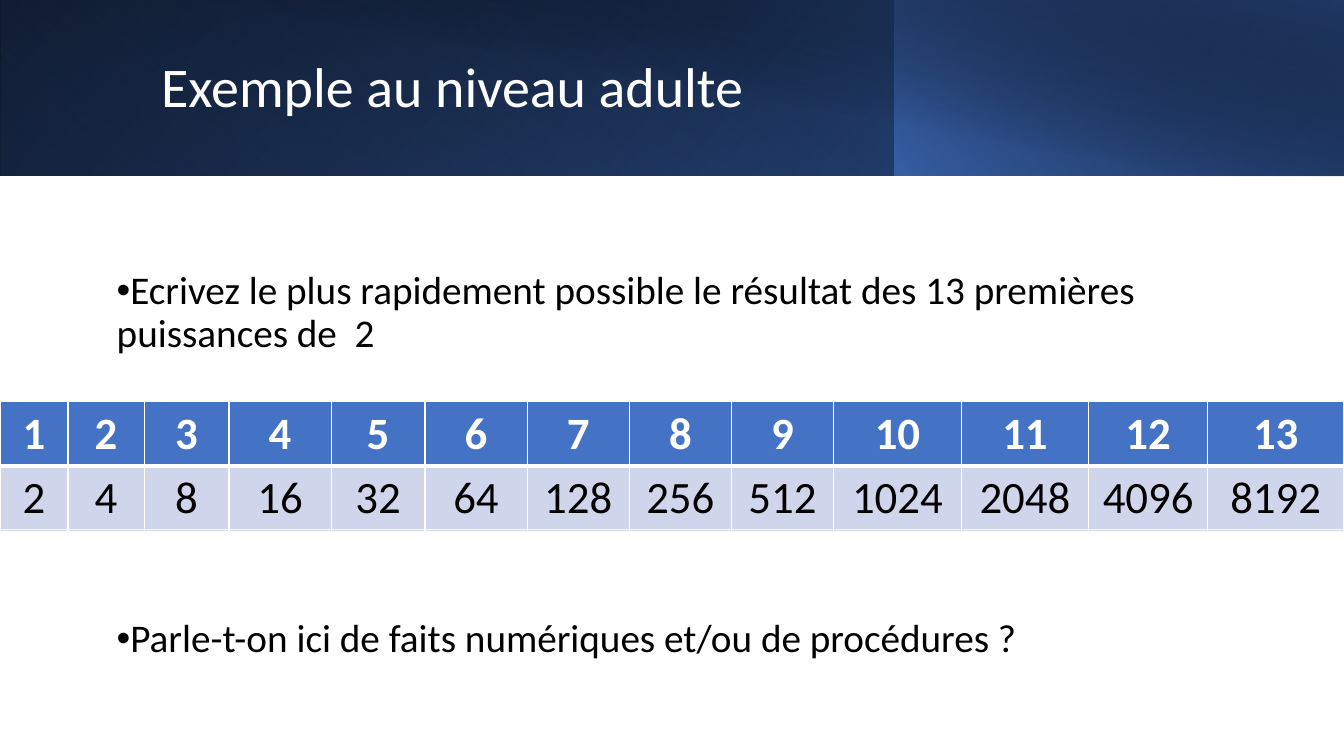
from pptx import Presentation
from pptx.dml.color import RGBColor
from pptx.enum.shapes import MSO_SHAPE
from pptx.enum.text import MSO_ANCHOR, PP_ALIGN
from pptx.oxml.ns import qn
from pptx.oxml.xmlchemy import OxmlElement
from pptx.util import Pt

RECT = MSO_SHAPE.RECTANGLE
MIDDLE = MSO_ANCHOR.MIDDLE
CENTER, LEFT = PP_ALIGN.CENTER, PP_ALIGN.LEFT

FONT, BULLET_FONT = "Calibri", "Arial"
WHITE, BLACK, BLUE, PALE = "FFFFFF", "000000", "4472C4", "CFD5EA"
NAVY, MID_BLUE = "203864", "2F5597"

SLIDE_W, SLIDE_H = 960, 540
TITLE = "Exemple au niveau adulte"
QUESTIONS = [
    "Ecrivez le plus rapidement possible le résultat des 13 premières puissances de  2",
    "Parle-t-on ici de faits numériques et/ou de procédures ?",
]
QUESTION_GAP = 182  # leaves room for the tables between the two questions

# left, width, height, rotation, flipped, clockwise angle, (position, colour, opacity %)
BANDS = [
    (0, 960, 125.3, 0, True, 140, [(0, BLACK, 100), (1, MID_BLUE, 100)]),
    (0, 639.4, 125.3, 180, True, 230, [(0.2, BLUE, 0), (1, NAVY, 55)]),
    (639, 321, 125.3, 0, True, 220, [(0, BLUE, 66), (1, BLACK, 30)]),
    (36, 924, 126, 0, False, 280, [(0.5, BLACK, 0), (0.99, NAVY, 52)]),
]

EXPONENTS = range(1, 14)
COLUMN_WIDTHS = [48.6, 54.4, 60.6, 73, 67, 73, 73, 73, 73, 91.2, 91, 85, 97.2]
ROW_H = 45.7
# top, number of powers filled in: the started table lies under the finished one
TABLES = [(288, 5), (287, 13)]
# fill, text colour, bold, bottom border width
HEADER_STYLE = (BLUE, WHITE, True, 3)
POWER_STYLE = (PALE, BLACK, False, 1)


def rgb(color):
    return RGBColor.from_string(color)


def write(tf, text, size, color, bold=False, align=LEFT, spacing=None,
          before=None, after=None, bullet=False, new=False):
    """Fill the first paragraph of a text frame, or a new one."""
    p = tf.add_paragraph() if new else tf.paragraphs[0]
    p.alignment = align
    if spacing:
        p.line_spacing = spacing
    if before is not None:
        p.space_before = Pt(before)
    if after is not None:
        p.space_after = Pt(after)
    if bullet:
        pPr = p._p.get_or_add_pPr()
        pPr.set("marL", "0")
        pPr.set("indent", str(Pt(-18)))
        for tag, key, value in (("a:buFont", "typeface", BULLET_FONT),
                                ("a:buChar", "char", "•")):
            bu = OxmlElement(tag)
            bu.set(key, value)
            pPr.append(bu)
    r = p.add_run()
    r.text = text
    r.font.name, r.font.size, r.font.bold = FONT, Pt(size), bold
    r.font.color.rgb = rgb(color)


def add_band(slide, left, width, height, rotation, flipped, angle, stops):
    sp = slide.shapes.add_shape(RECT, Pt(left), 0, Pt(width), Pt(height))
    sp.shadow.inherit = False
    sp.line.fill.background()
    sp.rotation = rotation
    if flipped:
        sp._element.spPr.xfrm.set("flipH", "1")
    sp.fill.gradient()
    sp.fill.gradient_angle = 360 - angle
    for stop, (position, color, _) in zip(sp.fill.gradient_stops, stops):
        stop.position = position
        stop.color.rgb = rgb(color)
    colors = sp._element.spPr.iter(qn("a:srgbClr"))
    for clr, (_, _, opacity) in zip(list(colors), stops):
        alpha = OxmlElement("a:alpha")
        alpha.set("val", str(opacity * 1000))
        clr.append(alpha)


def add_text_box(slide, left, top, width, height):
    tf = slide.shapes.add_textbox(Pt(left), Pt(top), Pt(width), Pt(height)).text_frame
    tf.word_wrap = True
    tf.vertical_anchor = MIDDLE
    return tf


def set_borders(cell, **widths):
    tcPr = cell._tc.get_or_add_tcPr()
    for side, width in widths.items():
        ln = OxmlElement("a:ln" + side)
        ln.set("w", str(Pt(width)))
        fill, clr = OxmlElement("a:solidFill"), OxmlElement("a:srgbClr")
        clr.set("val", WHITE)
        fill.append(clr)
        ln.append(fill)
        tcPr.append(ln)


def add_powers_table(slide, top, filled):
    powers = [2 ** n if n <= filled else "" for n in EXPONENTS]
    rows = [(EXPONENTS, HEADER_STYLE), (powers, POWER_STYLE)]
    table = slide.shapes.add_table(
        len(rows), len(COLUMN_WIDTHS), 0, Pt(top),
        Pt(SLIDE_W), Pt(ROW_H * len(rows))).table
    for column, width in zip(table.columns, COLUMN_WIDTHS):
        column.width = Pt(width)
    above = 1
    for i, (values, (fill, color, bold, below)) in enumerate(rows):
        table.rows[i].height = Pt(ROW_H)
        for j, value in enumerate(values):
            cell = table.cell(i, j)
            set_borders(cell, L=1, R=1, T=above, B=below)
            cell.fill.solid()
            cell.fill.fore_color.rgb = rgb(fill)
            cell.vertical_anchor = MIDDLE
            if value:
                write(cell.text_frame, str(value), 32, color, bold=bold, align=CENTER)
        above = below


def main():
    prs = Presentation()
    prs.slide_width, prs.slide_height = Pt(SLIDE_W), Pt(SLIDE_H)
    slide = prs.slides.add_slide(prs.slide_layouts[6])
    for band in BANDS:
        add_band(slide, *band)
    write(add_text_box(slide, 108, 23, 779, 81.4), TITLE, 40, WHITE, spacing=0.9)
    tf = add_text_box(slide, 76.3, 167, 808, 332)
    for i, question in enumerate(QUESTIONS):
        write(tf, question, 28, BLACK, spacing=0.9, after=6, bullet=True,
              before=QUESTION_GAP if i else None, new=i > 0)
    for top, filled in TABLES:
        add_powers_table(slide, top, filled)
    prs.save("out.pptx")


if __name__ == "__main__":
    main()
